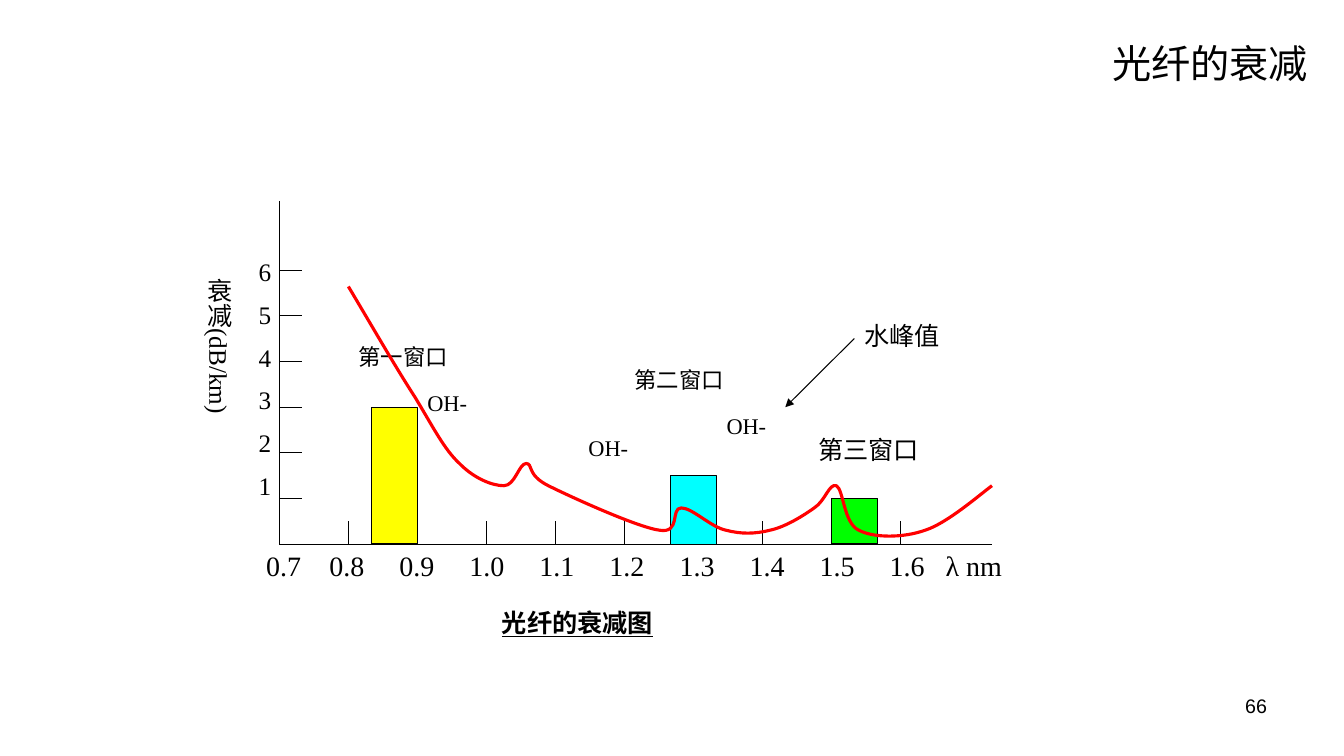
from lxml import etree
from pptx import Presentation, util as u
from pptx.dml.color import RGBColor
from pptx.enum import shapes, text
from pptx.oxml.ns import qn


def color(value):
    return RGBColor.from_string(value)


class Diagram:
    black = "000000"
    sans = "Arial"
    serif = "Times New Roman"
    thin = 0.75

    def __init__(self, slide):
        self.slide = slide

    def label(self, left, top, width, height, lines, size=16, font=serif, bold=False,
              underline=False, align=text.PP_ALIGN.JUSTIFY, gap=0, tabs=(), vertical=False):
        box = self.slide.shapes.add_textbox(u.Cm(left), u.Cm(top), u.Cm(width), u.Cm(height))
        frame = box.text_frame
        frame.word_wrap = True
        if vertical:
            frame._txBody.bodyPr.set("vert", "eaVert")
        for index, line in enumerate(lines):
            paragraph = frame.add_paragraph() if index else frame.paragraphs[0]
            paragraph.alignment = align
            if index and gap:
                paragraph.space_before = u.Pt(gap)
            if tabs:
                tab_list = etree.SubElement(paragraph._p.get_or_add_pPr(), qn("a:tabLst"))
                for position in tabs:
                    etree.SubElement(tab_list, qn("a:tab"), pos=str(u.Cm(position)), algn="l")
            run = paragraph.add_run()
            run.text = line
            run.font.name = font
            run.font.size = u.Pt(size)
            run.font.bold = bold
            run.font.underline = underline
            run.font.color.rgb = color(self.black)

    def line(self, x1, y1, x2, y2, arrow=False):
        connector = self.slide.shapes.add_connector(
            shapes.MSO_CONNECTOR.STRAIGHT, u.Cm(x1), u.Cm(y1), u.Cm(x2), u.Cm(y2))
        connector.line.width = u.Pt(self.thin)
        connector.line.color.rgb = color(self.black)
        if arrow:
            etree.SubElement(connector.line._get_or_add_ln(), qn("a:tailEnd"), type="triangle")
        etree.SubElement(connector._element.spPr, qn("a:effectLst"))

    def bar(self, left, top, width, height, fill):
        shape = self.slide.shapes.add_shape(
            shapes.MSO_SHAPE.RECTANGLE, u.Cm(left), u.Cm(top), u.Cm(width), u.Cm(height))
        shape.shadow.inherit = False
        shape.fill.solid()
        shape.fill.fore_color.rgb = color(fill)
        shape.line.color.rgb = color(self.black)
        shape.line.width = u.Pt(self.thin)

    def curve(self, start, segments, stroke, width):
        points = [(u.Cm(x), u.Cm(y)) for segment in segments
                  for x, y in zip(segment[::2], segment[1::2])]
        builder = self.slide.shapes.build_freeform(u.Cm(start[0]), u.Cm(start[1]))
        builder.add_line_segments(points, close=False)
        shape = builder.convert_to_shape()
        steps = list(shape._element.iter(qn("a:lnTo")))
        for first, second, third in zip(steps[::3], steps[1::3], steps[2::3]):
            outline = first.getparent()
            bezier = etree.SubElement(outline, qn("a:cubicBezTo"))
            for step in (first, second, third):
                bezier.append(step[0])
                outline.remove(step)
        shape.shadow.inherit = False
        shape.fill.background()
        shape.line.color.rgb = color(stroke)
        shape.line.width = u.Pt(width)


ORIGIN_X, ORIGIN_Y = 7.04, 13.71
STEP_X, STEP_Y = 1.74, 1.15
TICK = 0.58
AXIS_END = 25
BAR_WIDTH = 1.16

WINDOWS = [(20.96, 1, "00FF00"), (16.89, 1.5, "00FFFF"), (9.36, 3, "FFFF00")]
LABELS = [
    (10.52, 9.68, 2.9, "OH-", 16),
    (14.58, 10.82, 2.9, "OH-", 16),
    (18.06, 10.26, 2.9, "OH-", 16),
    (8.79, 8.53, 4.06, "第一窗口", 16),
    (15.74, 9.09, 4.06, "第二窗口", 16),
    (20.37, 10.82, 4.06, "第三窗口", 18),
    (21.53, 7.95, 4.06, "水峰值", 18),
]
ATTENUATION = [
    (9.4, 8.26, 9.98, 9.27, 10.46, 10.01),
    (10.92, 10.77, 11.2, 11.33, 11.58, 11.68),
    (11.96, 12.07, 12.42, 12.24, 12.7, 12.24),
    (12.98, 12.24, 13.08, 11.68, 13.26, 11.68),
    (13.44, 11.68, 13.26, 11.96, 13.82, 12.24),
    (14.38, 12.52, 16.05, 13.28, 16.61, 13.36),
    (17.17, 13.46, 16.89, 12.8, 17.17, 12.8),
    (17.45, 12.8, 17.91, 13.28, 18.29, 13.36),
    (18.67, 13.46, 19.02, 13.46, 19.41, 13.36),
    (19.79, 13.28, 20.24, 13.0, 20.52, 12.8),
    (20.8, 12.62, 20.9, 12.17, 21.08, 12.24),
    (21.26, 12.34, 21.26, 13.18, 21.64, 13.36),
    (22.02, 13.56, 22.76, 13.56, 23.32, 13.36),
    (23.88, 13.18, 24.71, 12.45, 25, 12.24),
]


def main():
    presentation = Presentation()
    presentation.slide_width, presentation.slide_height = u.Cm(33.87), u.Cm(19.05)
    diagram = Diagram(presentation.slides.add_slide(presentation.slide_layouts[6]))

    diagram.label(24.28, 17.35, 7.9, 1.32, ["66"], 14, Diagram.sans,
                  align=text.PP_ALIGN.RIGHT)
    diagram.label(27.13, 0.87, 6.74, 3.18, ["光纤的衰减"], 28, Diagram.sans,
                  align=text.PP_ALIGN.CENTER)
    diagram.label(12.4, 15.19, 6.96, 1.73, ["光纤的衰减图"], 18, bold=True, underline=True)

    diagram.line(ORIGIN_X, ORIGIN_Y, AXIS_END, ORIGIN_Y)
    for index in (1, 3, 4, 5, 7, 9):
        x = ORIGIN_X + index * STEP_X
        diagram.line(x, ORIGIN_Y - TICK, x, ORIGIN_Y)
    for level in range(1, 7):
        y = ORIGIN_Y - level * STEP_Y
        diagram.line(ORIGIN_X, y, ORIGIN_X + TICK, y)
    for left, level, fill in WINDOWS:
        height = level * STEP_Y
        diagram.bar(left, ORIGIN_Y - height, BAR_WIDTH, height, fill)
    diagram.line(ORIGIN_X, 5.06, ORIGIN_X, ORIGIN_Y)

    wavelengths = [f"{tenths / 10:.1f}" for tenths in range(7, 17)]
    tabs = [1.59 + 1.765 * index for index in range(9)] + [17.12]
    diagram.label(6.46, 13.7, 19.71, 1.73, ["\t".join(wavelengths + ["λ nm"])], 20, tabs=tabs)
    for left, top, width, caption, size in LABELS:
        diagram.label(left, top, width, 1.73, [caption], size)
    diagram.label(3.73, 6.76, 2.31, 5.18, ["衰减(dB/km)"], 18, vertical=True)
    diagram.line(21.53, 8.53, 19.79, 10.26, arrow=True)
    diagram.curve((8.78, 7.22), ATTENUATION, "FF0000", 2.25)
    diagram.label(6.27, 6.33, 1.52, 6.76, [str(level) for level in range(6, 0, -1)], 18, gap=9)

    presentation.save("out.pptx")


if __name__ == "__main__":
    main()
